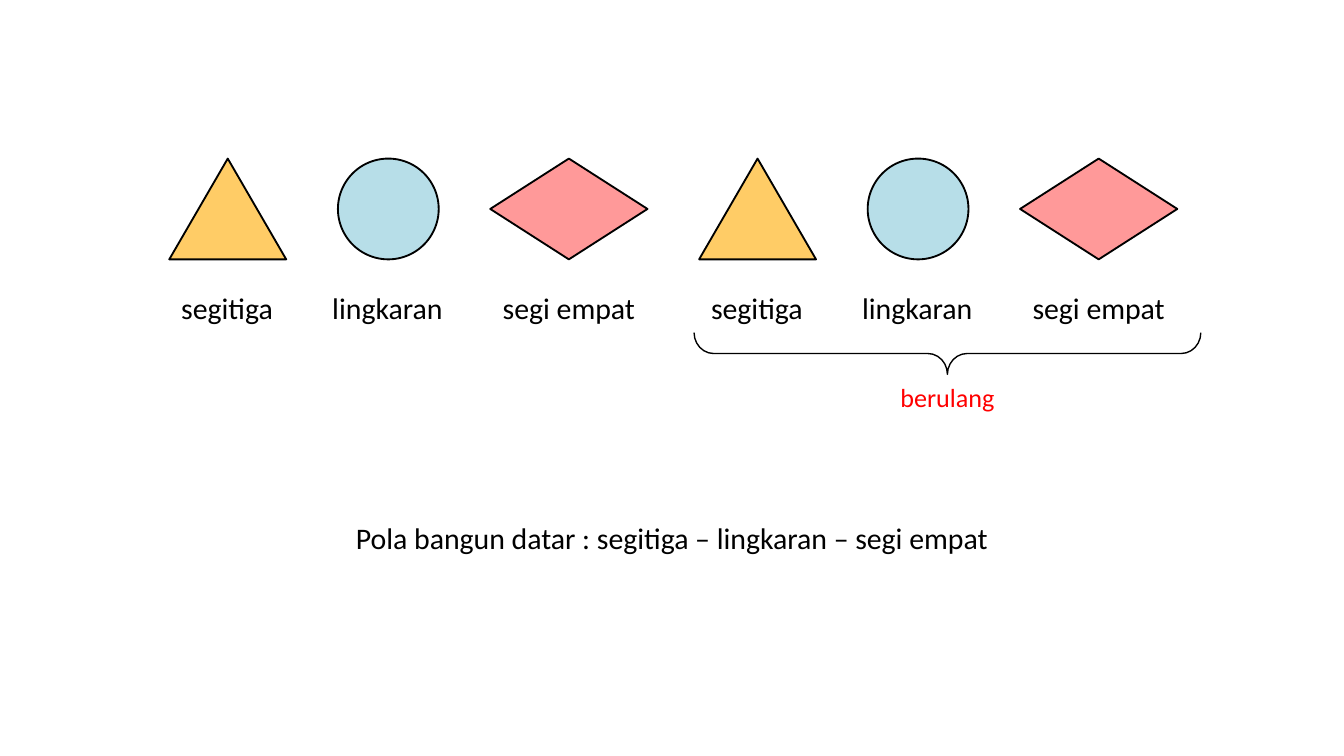
from pptx import Presentation
from pptx.dml.color import RGBColor
from pptx.enum.shapes import MSO_SHAPE
from pptx.enum.text import MSO_AUTO_SIZE, PP_ALIGN
from pptx.util import Inches, Pt

PATTERN = [
    ("segitiga", MSO_SHAPE.ISOSCELES_TRIANGLE, "triangle", 0.87, 0.89, PP_ALIGN.LEFT),
    ("lingkaran", MSO_SHAPE.OVAL, "circle", 0.75, 1.03, PP_ALIGN.LEFT),
    ("segi empat", MSO_SHAPE.DIAMOND, "diamond", 1.17, 1.2, PP_ALIGN.CENTER),
]
REPEATS = 2
REPEAT_LABEL = "berulang"
SUMMARY = "Pola bangun datar : segitiga – lingkaran – segi empat"

THEME = {
    "font": "Calibri", "body": 16, "small": 14,
    "text": "000000", "accent": "FF0000", "line": "000000",
    "triangle": "FFCC66", "circle": "B7DEE8", "diamond": "FF9999",
}

SLIDE_W = 10
SLIDE_H = SLIDE_W * 9 / 16
ROW_LEFT, ROW_W = 1.26, 7.5
SHAPE_TOP, SHAPE_H = 1.18, 0.75
LABEL_TOP, LABEL_H = 2.11, 0.37
BRACE_CX, BRACE_CY, BRACE_W, BRACE_H = 7.05, 2.63, 0.31, 3.77


def color(name):
    return RGBColor.from_string(THEME[name])


def add_figure(shapes, kind, x, y, w, h, fill=None, weight=1):
    sp = shapes.add_shape(kind, Inches(x), Inches(y), Inches(w), Inches(h))
    sp.shadow.inherit = False
    if fill:
        sp.fill.solid()
        sp.fill.fore_color.rgb = color(fill)
    else:
        sp.fill.background()
    sp.line.color.rgb = color("line")
    sp.line.width = Pt(weight)
    return sp


def add_label(shapes, text, cx, y, w, h, align, size="body", ink="text"):
    tb = shapes.add_textbox(Inches(cx - w / 2), Inches(y), Inches(w), Inches(h))
    tf = tb.text_frame
    tf.word_wrap = False
    tf.auto_size = MSO_AUTO_SIZE.SHAPE_TO_FIT_TEXT
    p = tf.paragraphs[0]
    p.alignment = align
    r = p.add_run()
    r.text = text
    r.font.name = THEME["font"]
    r.font.size = Pt(THEME[size])
    r.font.color.rgb = color(ink)


prs = Presentation()
prs.slide_width, prs.slide_height = Inches(SLIDE_W), Inches(SLIDE_H)
s = prs.slides.add_slide(prs.slide_layouts[6])

items = PATTERN * REPEATS
gap = (ROW_W - sum(item[3] for item in items)) / (len(items) - 1)
x = ROW_LEFT
for label, kind, fill, w, label_w, align in items:
    add_figure(s.shapes, kind, x, SHAPE_TOP, w, SHAPE_H, fill)
    add_label(s.shapes, label, x + w / 2, LABEL_TOP, label_w, LABEL_H, align)
    x += w + gap

group = s.shapes.add_group_shape()
brace = add_figure(group.shapes, MSO_SHAPE.LEFT_BRACE, BRACE_CX - BRACE_W / 2,
                   BRACE_CY - BRACE_H / 2, BRACE_W, BRACE_H, weight=0.75)
brace.rotation = 270
brace.adjustments[0] = 0.47
brace.adjustments[1] = 0.5
add_label(group.shapes, REPEAT_LABEL, BRACE_CX, 2.79, 0.91, 0.34,
          PP_ALIGN.CENTER, "small", "accent")

add_label(s.shapes, SUMMARY, 5.03, 3.82, 4.96, LABEL_H, PP_ALIGN.LEFT)

prs.save("out.pptx")
